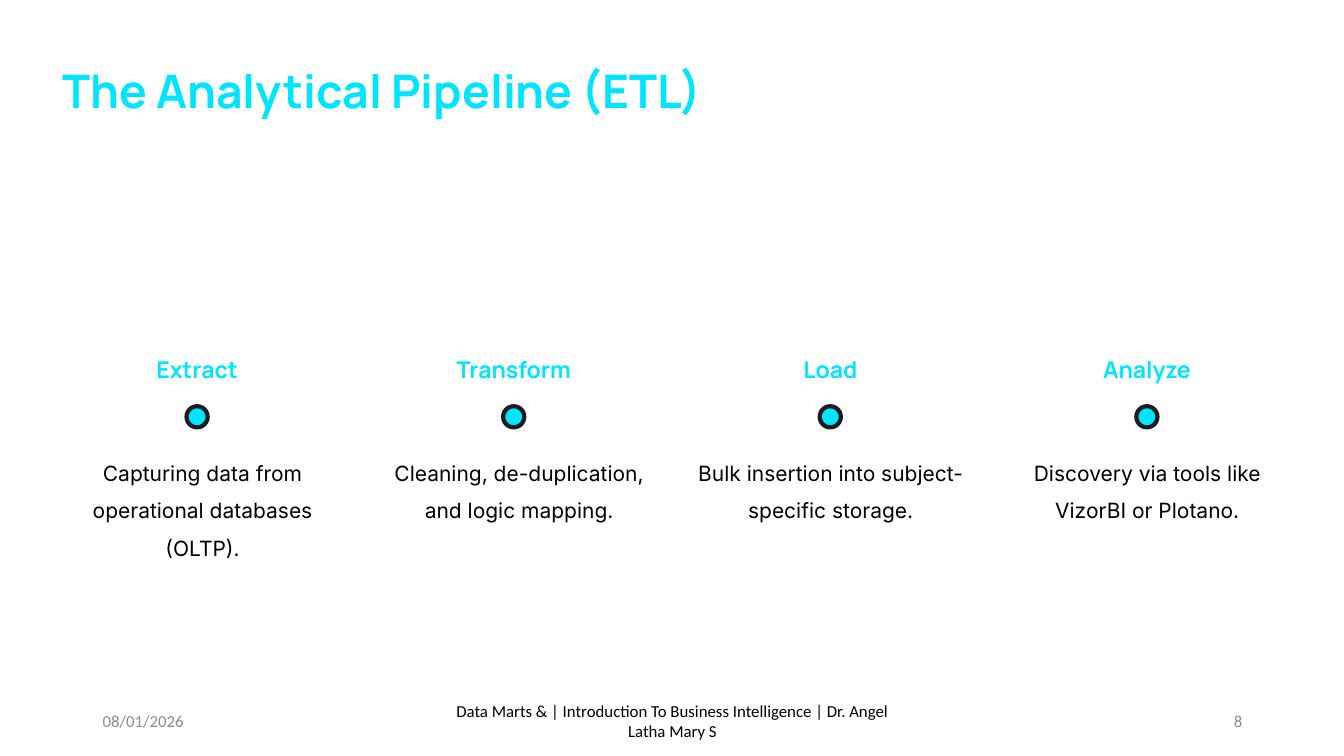
import pptx
import pptx.dml.color
import pptx.enum.shapes
import pptx.enum.text
import pptx.util
from dataclasses import dataclass

Inches = pptx.util.Inches
Pt = pptx.util.Pt
Align = pptx.enum.text.PP_ALIGN
Anchor = pptx.enum.text.MSO_ANCHOR


@dataclass(frozen=True)
class Theme:
    accent: str = "00E5FF"
    outline: str = "1A1C22"
    ink: str = "000000"
    muted: str = "8C8C8C"
    heading_font: str = "Manrope"
    body_font: str = "Inter"
    footer_font: str = "Calibri"
    title_size: float = 33
    stage_size: float = 16.5
    body_size: float = 15
    footer_size: float = 12


theme = Theme()


def rgb(code):
    return pptx.dml.color.RGBColor.from_string(code)


def add_text(page, text, place, font, size, color, align=Align.LEFT,
             bold=False, spacing=None, footer=False):
    """Add a one-paragraph text box; footer boxes keep insets and centre vertically."""
    box = page.shapes.add_textbox(*(Inches(length) for length in place))
    frame = box.text_frame
    frame.text = text
    frame.word_wrap = True
    if footer:
        frame.vertical_anchor = Anchor.MIDDLE
    else:
        frame.margin_left = frame.margin_right = 0
        frame.margin_top = frame.margin_bottom = 0
    para = frame.paragraphs[0]
    para.alignment = align
    para.line_spacing = spacing
    span = para.runs[0]
    span.font.name = font
    span.font.size = Pt(size)
    span.font.bold = bold
    span.font.color.rgb = rgb(color)


deck = pptx.Presentation()
deck.slide_width = Inches(13.33)
deck.slide_height = Inches(7.5)
page = deck.slides.add_slide(deck.slide_layouts[6])

add_text(page, "The Analytical Pipeline (ETL)", (0.62, 0.62, 12.69, 0.68),
         theme.heading_font, theme.title_size, theme.accent, bold=True)

# Stage name, description, description's offset from the column, its height
stages = [
    ("Extract", "Capturing data from operational databases (OLTP).", 0.12, 1.14),
    ("Transform", "Cleaning, de-duplication, and logic mapping.", 0.12, 0.76),
    ("Load", "Bulk insertion into subject-specific storage.", 0.07, 0.76),
    ("Analyze", "Discovery via tools like VizorBI or Plotano.", 0.07, 0.76),
]
first_column, column_step, column_width = 0.56, 3.14, 2.79
dot_size = 0.21

for index, (name, description, offset, height) in enumerate(stages):
    left = first_column + index * column_step
    dot = page.shapes.add_shape(
        pptx.enum.shapes.MSO_SHAPE.ROUNDED_RECTANGLE,
        Inches(left + (column_width - dot_size) / 2), Inches(4.03),
        Inches(dot_size), Inches(dot_size))
    dot.adjustments[0] = 0.5
    dot.shadow.inherit = False
    dot.fill.solid()
    dot.fill.fore_color.rgb = rgb(theme.accent)
    dot.line.color.rgb = rgb(theme.outline)
    dot.line.width = Pt(3)
    add_text(page, name, (left, 3.53, column_width, 0.34), theme.heading_font,
             theme.stage_size, theme.accent, Align.CENTER, bold=True)
    add_text(page, description, (left + offset, 4.44, 2.66, height), theme.body_font,
             theme.body_size, theme.ink, Align.CENTER, spacing=1.5)

footers = [
    ("08/01/2026", 0.92, 3, theme.muted, Align.LEFT),
    ("Data Marts & | Introduction To Business Intelligence | Dr. Angel Latha Mary S",
     4.42, 4.5, theme.ink, Align.CENTER),
    ("8", 9.42, 3, theme.muted, Align.RIGHT),
]
for text, left, width, color, align in footers:
    add_text(page, text, (left, 6.95, width, 0.4), theme.footer_font,
             theme.footer_size, color, align, footer=True)

deck.save("out.pptx")
